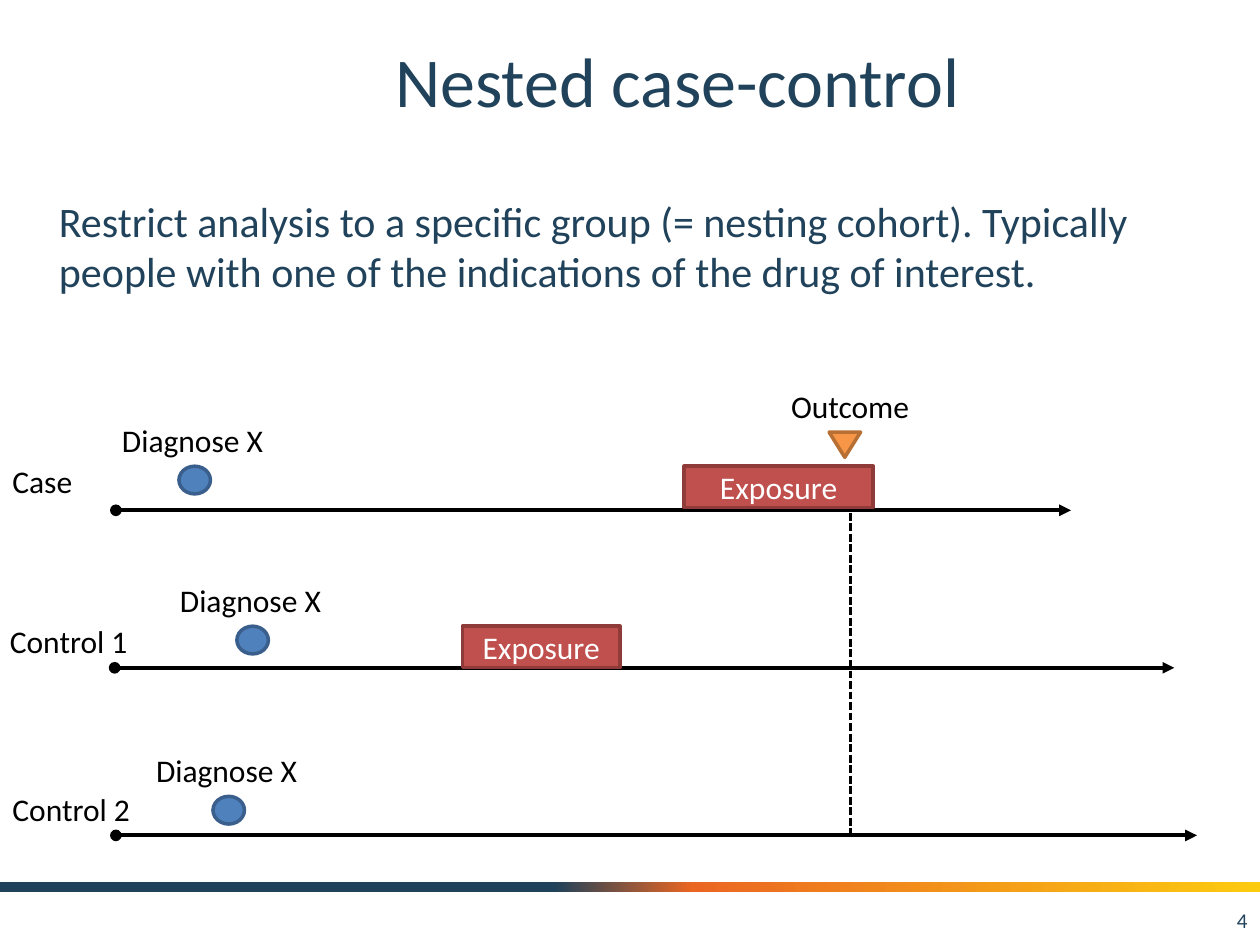
from copy import deepcopy

from lxml import etree
from pptx import Presentation
from pptx import util as u
from pptx.dml.color import RGBColor
from pptx.enum import dml, shapes, text
from pptx.oxml.ns import qn

NAVY = RGBColor(0x20, 0x42, 0x5A)
EMBER = RGBColor(0xEB, 0x66, 0x22)
GOLD = RGBColor(0xFC, 0xCB, 0x10)
BLACK = RGBColor(0, 0, 0)
WHITE = RGBColor(0xFF, 0xFF, 0xFF)
RED, RED_EDGE = RGBColor(0xC0, 0x50, 0x4D), RGBColor(0x8E, 0x3B, 0x39)
ORANGE, ORANGE_EDGE = RGBColor(0xF7, 0x96, 0x46), RGBColor(0xB7, 0x6F, 0x34)
BLUE, BLUE_EDGE = RGBColor(0x4F, 0x81, 0xBD), RGBColor(0x3A, 0x5F, 0x8C)

COLS, ROWS = 100, 75
LEFT, CENTER, RIGHT = text.PP_ALIGN.LEFT, text.PP_ALIGN.CENTER, text.PP_ALIGN.RIGHT
SHAPE = shapes.MSO_SHAPE


class Canvas:
    font = "Calibri"
    edge = u.Pt(2)

    def __init__(self, prs):
        self.s = prs.slides.add_slide(prs.slide_layouts[6])
        self.col = prs.slide_width / COLS
        self.row = prs.slide_height / ROWS

    def place(self, *cells):
        return [round(c * (self.row if i % 2 else self.col)) for i, c in enumerate(cells)]

    def fill_text(self, tf, words, size, color, align):
        p = tf.paragraphs[0]
        p.text = words
        p.alignment = align
        p.font.name, p.font.size = self.font, u.Pt(size)
        p.font.color.rgb = color

    def text(self, words, *box, size=18, color=BLACK, align=LEFT, wrap=False, middle=False):
        tf = self.s.shapes.add_textbox(*self.place(*box)).text_frame
        tf.word_wrap = wrap
        if middle:
            tf.vertical_anchor = text.MSO_ANCHOR.MIDDLE
        else:
            tf.auto_size = text.MSO_AUTO_SIZE.SHAPE_TO_FIT_TEXT
        self.fill_text(tf, words, size, color, align)

    def shape(self, kind, *box, fill, edge, words=""):
        sp = self.s.shapes.add_shape(kind, *self.place(*box))
        sp.shadow.inherit = False
        sp.fill.solid()
        sp.fill.fore_color.rgb = fill
        sp.line.color.rgb = edge
        sp.line.width = self.edge
        if words:
            sp.text_frame.vertical_anchor = text.MSO_ANCHOR.MIDDLE
            self.fill_text(sp.text_frame, words, 18, WHITE, CENTER)

    def gradient_bar(self, *box, stops):
        sp = self.s.shapes.add_shape(SHAPE.RECTANGLE, *self.place(*box))
        sp.shadow.inherit = False
        sp.line.fill.background()
        sp.fill.gradient()
        sp.fill.gradient_angle = 0
        stop_list = sp._element.spPr.find(qn("a:gradFill")).find(qn("a:gsLst"))
        stop_list.append(deepcopy(stop_list[-1]))
        for stop, (position, color) in zip(sp.fill.gradient_stops, stops):
            stop.position = position
            stop.color.rgb = color

    def line(self, *ends, width=2.25, dash=None, head=None, tail=None):
        cx = self.s.shapes.add_connector(shapes.MSO_CONNECTOR.STRAIGHT, *self.place(*ends))
        cx.line.color.rgb = BLACK
        cx.line.width = u.Pt(width)
        if dash:
            cx.line.dash_style = dash
        ln = cx._element.spPr.find(qn("a:ln"))
        for tag, kind in (("a:headEnd", head), ("a:tailEnd", tail)):
            if kind:
                etree.SubElement(ln, qn(tag), type=kind)
        etree.SubElement(cx._element.spPr, qn("a:effectLst"))

    def exposure(self, x, y, width):
        self.shape(SHAPE.RECTANGLE, x, y, width, 3.3, fill=RED, edge=RED_EDGE, words="Exposure")

    def diagnosis(self, x, y):
        self.shape(SHAPE.FLOWCHART_CONNECTOR, x, y, 2.5, 2.2, fill=BLUE, edge=BLUE_EDGE)
        self.text("Diagnose X", x - 5.5, y - 4.05, 13.4, 4)


def main():
    prs = Presentation()
    prs.slide_width, prs.slide_height = u.Inches(10), u.Inches(7.5)
    c = Canvas(prs)

    c.gradient_bar(0, 70, COLS, 0.8, stops=((0.44, NAVY), (0.55, EMBER), (1, GOLD)))
    c.text("Nested case-control", 12.5, 1.7, 82.5, 9.2,
           size=40, color=NAVY, align=CENTER, wrap=True, middle=True)
    c.text("4", 76.7, 71, 23.3, 4, size=12, color=NAVY, align=RIGHT, wrap=True, middle=True)
    c.text("Restrict analysis to a specific group (= nesting cohort). Typically people "
           "with one of the indications of the drug of interest.",
           3.7, 15, 95, 9.1, size=24, color=NAVY, wrap=True)

    timelines = (
        ("Case", 0, 36.2, 6.8, 9.2, 85, 40.5, 14.2, 37, (54.3, 15)),
        ("Control 1", -0.2, 48.9, 11.5, 9.1, 93.2, 53, 18.8, 49.7, (36.7, 12.5)),
        ("Control 2", 0, 62.2, 11.5, 9.2, 95, 66.3, 16.9, 63.2, None),
    )
    for name, name_x, name_y, name_w, start, end, axis, dx, marks_y, exposed in timelines:
        c.line(start, axis, end, axis, head="oval", tail="triangle")
        if exposed:
            c.exposure(exposed[0], marks_y, exposed[1])
        c.text(name, name_x, name_y, name_w, 4)
        c.diagnosis(dx, marks_y)

    c.text("Outcome", 61.8, 30.2, 11.5, 4)
    c.shape(SHAPE.FLOWCHART_MERGE, 65.8, 34.3, 2.5, 2, fill=ORANGE, edge=ORANGE_EDGE)
    c.line(67.5, 40.7, 67.5, 66.3, width=1.5, dash=dml.MSO_LINE.SQUARE_DOT)

    prs.save("out.pptx")


if __name__ == "__main__":
    main()
